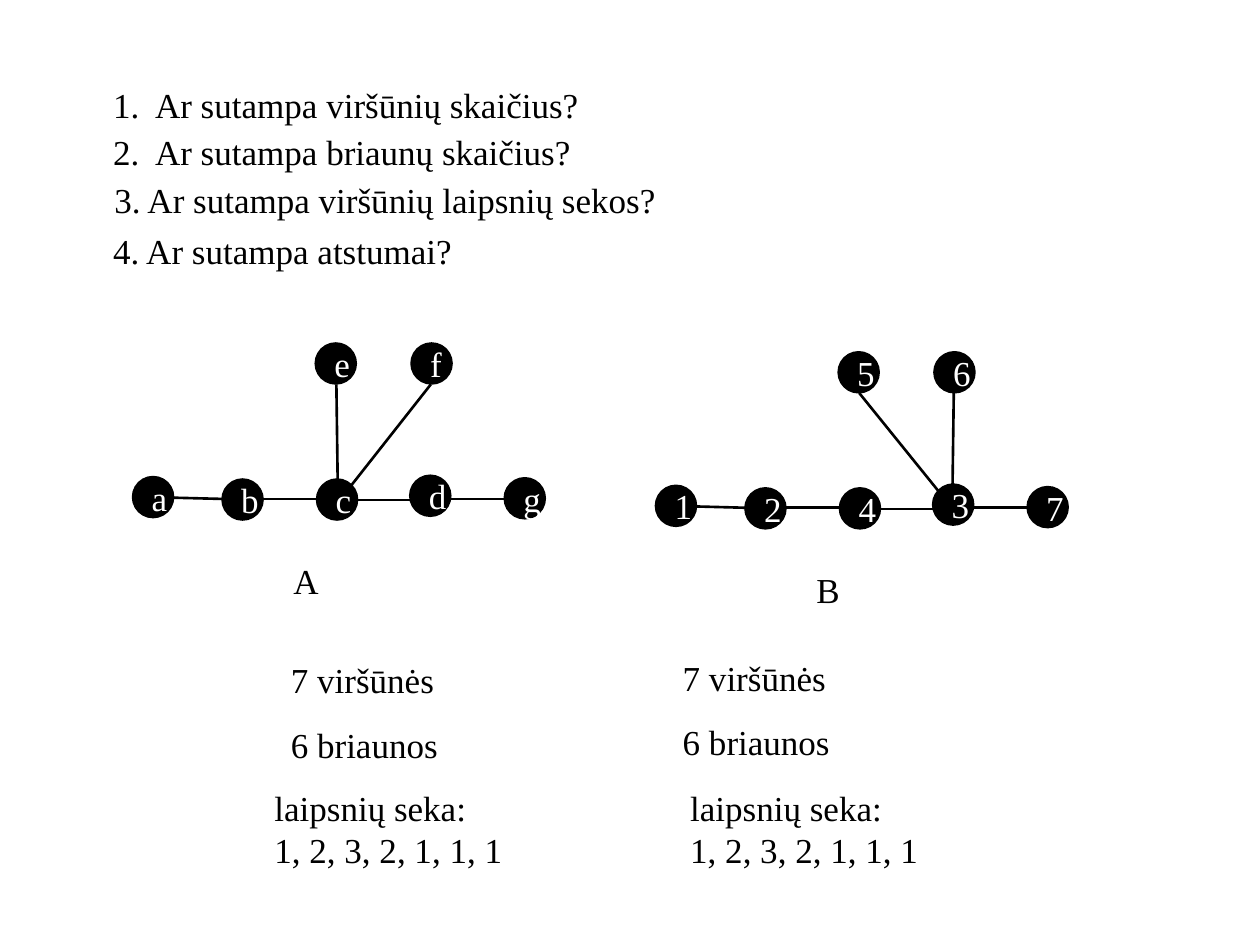
"""Slide comparing two graphs, A and B, by vertices, edges and degree sequence."""
from lxml.etree import SubElement
from pptx import Presentation
from pptx.dml.color import RGBColor
from pptx.enum.shapes import MSO_CONNECTOR, MSO_SHAPE
from pptx.enum.text import MSO_ANCHOR, MSO_AUTO_SIZE, PP_ALIGN
from pptx.oxml.ns import qn
from pptx.util import Inches, Pt

COLORS = {"ink": "000000", "vertex_label": "FFFFFF"}
INK = RGBColor.from_string(COLORS["ink"])
VERTEX_SIZE = 0.31
SHIFT_B = (4.15, 0.07)


def write(frame, lines, color):
    frame.text = "\n".join(lines)
    for paragraph in frame.paragraphs:
        for run in paragraph.runs:
            run.font.name = "Times New Roman"
            run.font.size = Pt(20)
            run.font.color.rgb = RGBColor.from_string(COLORS[color])


def add_text(shapes, left, top, width, lines):
    height = 0.44 + 0.33 * (len(lines) - 1)
    box = shapes.add_textbox(Inches(left), Inches(top), Inches(width), Inches(height))
    box.text_frame.word_wrap = True
    box.text_frame.auto_size = MSO_AUTO_SIZE.SHAPE_TO_FIT_TEXT
    write(box.text_frame, lines, "ink")


prs = Presentation()
prs.slide_width, prs.slide_height = Inches(10), Inches(7.5)
slide = prs.slides.add_slide(prs.slide_layouts[6])

questions = [
    (0.80, 0.61, 8.66, "1.  Ar sutampa viršūnių skaičius?"),
    (0.80, 0.99, 4.93, "2.  Ar sutampa briaunų skaičius?"),
    (0.81, 1.37, 8.66, "3. Ar sutampa viršūnių laipsnių sekos?"),
    (0.80, 1.77, 8.66, "4. Ar sutampa atstumai?"),
]
for left, top, width, question in questions:
    add_text(slide.shapes, left, top, width, [question])

vertex_places = [(1.06, 3.79), (1.77, 3.81), (2.52, 3.81), (3.26, 3.78),
                 (4.01, 3.80), (2.51, 2.73), (3.27, 2.73)]
chain_edges = [(1.38, 3.95, 1.77, 3.96), (2.08, 3.96, 2.52, 3.96),
               (2.82, 3.97, 3.26, 3.97), (3.57, 3.96, 4.01, 3.96)]
branches_a = [(2.67, 3.05, 2.68, 3.81), (3.42, 3.05, 2.79, 3.85)]
branches_b = [(2.67, 3.05, 3.30, 3.83), (3.42, 3.05, 3.41, 3.78)]
graphs = [
    ("A", "abcdgef", branches_a, (0, 0)),
    ("B", "1243756", branches_b, SHIFT_B),
]

for graph_name, vertex_names, branches, (dx, dy) in graphs:
    graph = slide.shapes.add_group_shape().shapes
    for x1, y1, x2, y2 in chain_edges + branches:
        edge = graph.add_connector(MSO_CONNECTOR.STRAIGHT, Inches(x1 + dx), Inches(y1 + dy),
                                   Inches(x2 + dx), Inches(y2 + dy))
        edge.line.color.rgb = INK
        edge.line.width = Pt(1.5)
        SubElement(edge._element.spPr, qn("a:effectLst"))
    for vertex_name, (left, top) in zip(vertex_names, vertex_places):
        vertex = graph.add_shape(MSO_SHAPE.OVAL, Inches(left + dx), Inches(top + dy),
                                 Inches(VERTEX_SIZE), Inches(VERTEX_SIZE))
        vertex.shadow.inherit = False
        vertex.fill.solid()
        vertex.fill.fore_color.rgb = INK
        vertex.line.color.rgb = INK
        vertex.line.width = Pt(2)
        write(vertex.text_frame, [vertex_name], "vertex_label")
        vertex.text_frame.vertical_anchor = MSO_ANCHOR.MIDDLE
        vertex.text_frame.paragraphs[0].alignment = PP_ALIGN.CENTER
    add_text(graph, 2.23 + dx, 4.39 + dy, 0.32, [graph_name])

for count_left, count_top, sequence_left, sequence_width in [(2.21, 5.18, 2.08, 2.13),
                                                             (5.32, 5.16, 5.38, 2.03)]:
    add_text(slide.shapes, count_left, count_top, 1.88, ["7 viršūnės"])
    add_text(slide.shapes, count_left, count_top + 0.51, 1.88, ["6 briaunos"])
    add_text(slide.shapes, sequence_left, 6.19, sequence_width,
             ["laipsnių seka:", "1, 2, 3, 2, 1, 1, 1"])

prs.save("out.pptx")
